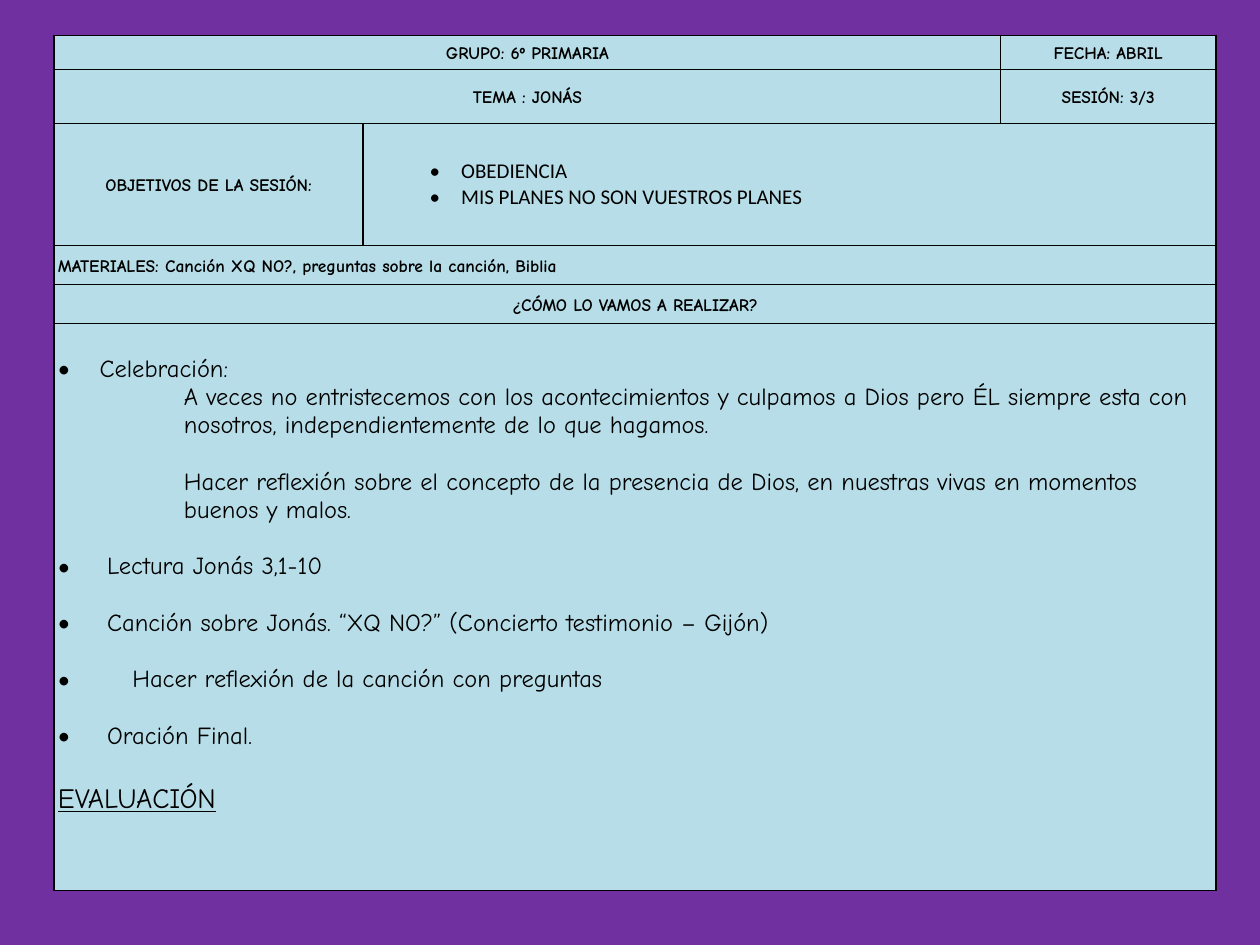
from dataclasses import dataclass

from lxml import etree
from pptx import Presentation
from pptx.dml.color import RGBColor
from pptx.enum.text import MSO_ANCHOR, PP_ALIGN
from pptx.oxml.ns import qn
from pptx.table import Table, _Cell
from pptx.text.text import _Paragraph
from pptx.util import Inches, Pt

PURPLE = RGBColor(0x70, 0x30, 0xA0)
PALE_BLUE = RGBColor(0xB7, 0xDE, 0xE8)
BLACK = RGBColor(0, 0, 0)
LEFT, CENTER = PP_ALIGN.LEFT, PP_ALIGN.CENTER
TOP, MIDDLE = MSO_ANCHOR.TOP, MSO_ANCHOR.MIDDLE
COMIC, CALIBRI = "Comic Neue", "Calibri"

COLUMN_WIDTHS = (2.45, 5.06, 1.71)
ROW_HEIGHTS = (0.27, 0.43, 0.97, 0.31, 0.31, 4.5)
TABLE_LEFT, TABLE_TOP = 0.43, 0.28
SIDE_MARGIN = 0.03
BORDER_WIDTH = Pt(1)
LINE_GAP = 16.2  # points, one line of activity text


@dataclass(frozen=True)
class Line:
    text: str
    size: float = 14
    font: str = COMIC
    bold: bool = False
    underline: bool = False
    align: PP_ALIGN = LEFT
    spacing: float = 1.0
    before: float = 0
    level: int = 0
    indent: float = 0
    hanging: float = 0  # inches between bullet and text; 0 means no bullet


@dataclass(frozen=True)
class Block:
    row: int
    column: int
    span: int
    lines: tuple[Line, ...]
    anchor: MSO_ANCHOR = MIDDLE
    margin_top: float = 0


def heading(text: str, align: PP_ALIGN = CENTER) -> tuple[Line, ...]:
    return (Line(text, size=10, bold=True, align=align, spacing=1.15),)


def objective(text: str) -> Line:
    return Line(text, size=12, font=CALIBRI, level=1, indent=0.75, hanging=0.25)


def activity(text: str, hanging: float, before: float = LINE_GAP) -> Line:
    return Line(text, before=before, indent=hanging, hanging=hanging)


def explanation(text: str, before: float = 0) -> Line:
    return Line(text, before=before, level=2, indent=1)


ACTIVITIES = (
    activity("Celebración:", 0.33, before=0),
    explanation("A veces no entristecemos con los acontecimientos y culpamos a Dios "
                "pero ÉL siempre esta con nosotros, independientemente de lo que hagamos."),
    explanation("Hacer reflexión sobre el concepto de la presencia de Dios, en nuestras "
                "vivas en momentos buenos y malos.", before=LINE_GAP),
    activity("Lectura Jonás 3,1-10", 0.39),
    activity("Canción sobre Jonás. “XQ NO?” (Concierto testimonio – Gijón)", 0.39),
    activity("Hacer reflexión de la canción con preguntas", 0.59),
    activity("Oración Final.", 0.39),
    Line("EVALUACIÓN", size=16, underline=True, before=18.4),
)

BLOCKS = (
    Block(0, 0, 2, heading("GRUPO: 6º PRIMARIA")),
    Block(0, 2, 1, heading("FECHA: ABRIL")),
    Block(1, 0, 2, heading("TEMA : JONÁS")),
    Block(1, 2, 1, heading("SESIÓN: 3/3")),
    Block(2, 0, 1, heading("OBJETIVOS DE LA SESIÓN:")),
    Block(2, 1, 2, (objective("OBEDIENCIA"),
                    objective("MIS PLANES NO SON VUESTROS PLANES"))),
    Block(3, 0, 3, heading("MATERIALES: Canción XQ NO?, preguntas sobre la canción, Biblia",
                           align=LEFT)),
    Block(4, 0, 3, heading("¿CÓMO LO VAMOS A REALIZAR?")),
    Block(5, 0, 3, ACTIVITIES, anchor=TOP, margin_top=0.25),
)


def style_cell(cell: _Cell) -> None:
    cell.margin_left = cell.margin_right = Inches(SIDE_MARGIN)
    cell.margin_top = cell.margin_bottom = 0
    properties = cell._tc.get_or_add_tcPr()
    for side in ("a:lnL", "a:lnR", "a:lnT", "a:lnB"):
        border = etree.SubElement(properties, qn(side), w=str(BORDER_WIDTH))
        fill = etree.SubElement(border, qn("a:solidFill"))
        etree.SubElement(fill, qn("a:srgbClr"), val=str(BLACK))
    # The schema wants the fill after the borders.
    cell.fill.solid()
    cell.fill.fore_color.rgb = PALE_BLUE


def write_line(para: _Paragraph, line: Line) -> None:
    para.text = line.text
    properties = para._p.get_or_add_pPr()
    properties.set("marL", str(Inches(line.indent)))
    properties.set("indent", str(-Inches(line.hanging)))
    if line.hanging:
        etree.SubElement(properties, qn("a:buFont"), typeface=CALIBRI)
        etree.SubElement(properties, qn("a:buChar"), char="•")
    para.level = line.level
    para.alignment = line.align
    para.line_spacing = line.spacing
    para.space_before = Pt(line.before)
    for span in para.runs:
        span.font.name = line.font
        span.font.size = Pt(line.size)
        span.font.bold = line.bold
        span.font.underline = line.underline
        span.font.color.rgb = BLACK


def fill_block(table: Table, block: Block) -> None:
    cell = table.cell(block.row, block.column)
    if block.span > 1:
        cell.merge(table.cell(block.row, block.column + block.span - 1))
    cell.vertical_anchor = block.anchor
    cell.margin_top = Inches(block.margin_top)
    frame = cell.text_frame
    frame.word_wrap = True
    for index, line in enumerate(block.lines):
        write_line(frame.add_paragraph() if index else frame.paragraphs[0], line)


def main() -> None:
    deck = Presentation()
    deck.slide_width, deck.slide_height = Inches(10), Inches(7.5)
    page = deck.slides.add_slide(deck.slide_layouts[6])
    page.background.fill.solid()
    page.background.fill.fore_color.rgb = PURPLE

    table = page.shapes.add_table(
        len(ROW_HEIGHTS), len(COLUMN_WIDTHS), Inches(TABLE_LEFT), Inches(TABLE_TOP),
        Inches(sum(COLUMN_WIDTHS)), Inches(sum(ROW_HEIGHTS))).table
    table.first_row = table.horz_banding = False
    for column, width in zip(table.columns, COLUMN_WIDTHS):
        column.width = Inches(width)
    for row, height in zip(table.rows, ROW_HEIGHTS):
        row.height = Inches(height)
    for cell in table.iter_cells():
        style_cell(cell)
    for block in BLOCKS:
        fill_block(table, block)

    deck.save("out.pptx")


if __name__ == "__main__":
    main()
